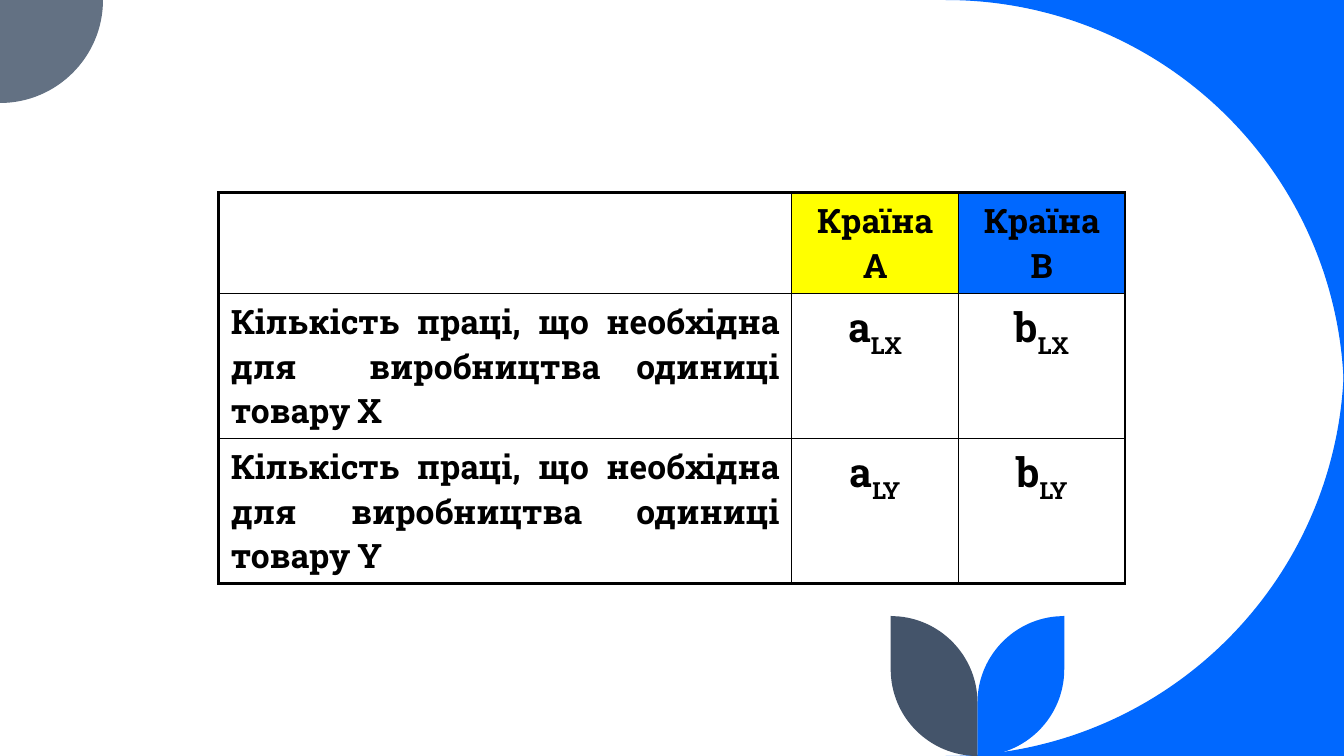
from lxml.etree import SubElement
from pptx import Presentation
from pptx.dml.color import RGBColor
from pptx.enum.text import PP_ALIGN
from pptx.oxml.ns import qn
from pptx.util import Pt

COLORS = {"blue": "0068FF", "gray": "637183", "slate": "44546A",
          "yellow": "FFFF00", "black": "000000"}
FONT = "Roboto Slab"

presentation = Presentation()
presentation.slide_width = Pt(960)
presentation.slide_height = Pt(540)
slide = presentation.slides.add_slide(presentation.slide_layouts[6])


def add_outline(segments, color):
    """Draw a closed outline; a segment is one point, or two controls and an end."""
    corners = [(Pt(x), Pt(y)) for segment in segments for x, y in segment]
    builder = slide.shapes.build_freeform(*corners[0])
    builder.add_line_segments(corners[1:], close=True)
    shape = builder.convert_to_shape()
    shape.shadow.inherit = False
    shape.fill.solid()
    shape.fill.fore_color.rgb = RGBColor.from_string(COLORS[color])
    shape.line.fill.background()

    # Join each group of three points into one curve
    lines = iter(list(shape._element.iter(qn("a:lnTo"))))
    for segment in segments[1:]:
        steps = [next(lines) for _ in segment]
        if len(steps) == 3:
            curve = SubElement(steps[0].getparent(), qn("a:cubicBezTo"))
            steps[0].addprevious(curve)
            for step in steps:
                curve.append(step[0])
                step.getparent().remove(step)


def add_run(paragraph, text, size, subscript=False):
    run = paragraph.add_run()
    run.text = text
    run.font.name = FONT
    run.font.size = Pt(size)
    run.font.bold = True
    run.font.color.rgb = RGBColor.from_string(COLORS["black"])
    if subscript:
        run.font._element.set("baseline", "-30000")


# Blue corners on the right
add_outline([[(960, 0)], [(675.5, 0)],
             [(833, 0), (960, 127.4), (960, 284.5)]], "blue")
add_outline([[(960, 255.5)],
             [(960, 412.6), (833, 540), (675.5, 540)], [(960, 540)]], "blue")

# Gray quarter circle at top left
add_outline([[(0, 0)], [(73.6, 0)],
             [(73.6, 40.6), (40.6, 73.6), (0, 73.6)]], "gray")

# Two mirrored leaves
STEM = 698.2
leaf = [[(62, 440)], [(62, 478)],
        [(62, 512.5), (34, 540), (0, 540)], [(0, 501.8)],
        [(0, 470.2), (24.3, 443.5), (55.7, 440.4)]]
for side, color in ((1, "blue"), (-1, "slate")):
    add_outline([[(STEM + side * x, y) for x, y in segment] for segment in leaf], color)

# Table: each cell holds its runs as (text, size, subscript)
rows = [
    [[], [("Країна А", 24, False)], [("Країна В", 24, False)]],
    [[("Кількість праці, що необхідна для  виробництва одиниці товару X", 24, False)],
     [("a", 29, False), ("LX", 29, True)], [("b", 29, False), ("LX", 29, True)]],
    [[("Кількість праці, що необхідна для виробництва одиниці товару Y", 24, False)],
     [("а", 29, False), ("LY", 29, True)], [("b", 29, False), ("LY", 29, True)]],
]
header_fills = {1: "yellow", 2: "blue"}
widths = [409.2, 119.1, 119.1]
heights = [69.2, 98, 98]

table = slide.shapes.add_table(3, 3, Pt(156.3), Pt(137.5),
                               Pt(sum(widths)), Pt(sum(heights))).table
table.first_row = False
table.horz_banding = False
for column, width in zip(table.columns, widths):
    column.width = Pt(width)
for row, height in zip(table.rows, heights):
    row.height = Pt(height)

for row_index, row in enumerate(rows):
    for column_index, runs in enumerate(row):
        cell = table.cell(row_index, column_index)
        cell.margin_left = cell.margin_right = Pt(8.64)
        cell.margin_top = cell.margin_bottom = Pt(4.32)

        # Thick outer and thin inner borders
        outer_edges = {"a:lnL": column_index == 0, "a:lnR": column_index == 2,
                       "a:lnT": row_index == 0, "a:lnB": row_index == 2}
        properties = cell._tc.get_or_add_tcPr()
        for tag, is_outer in outer_edges.items():
            border = SubElement(properties, qn(tag), w=str(Pt(2.25 if is_outer else 1)))
            fill = SubElement(border, qn("a:solidFill"))
            SubElement(fill, qn("a:srgbClr"), val=COLORS["black"])

        # Fill
        if row_index == 0 and column_index in header_fills:
            cell.fill.solid()
            cell.fill.fore_color.rgb = RGBColor.from_string(
                COLORS[header_fills[column_index]])
        else:
            cell.fill.background()

        # Text
        paragraph = cell.text_frame.paragraphs[0]
        paragraph.alignment = PP_ALIGN.CENTER if column_index else PP_ALIGN.JUSTIFY
        for text, size, subscript in runs:
            add_run(paragraph, text, size, subscript)

presentation.save("out.pptx")
